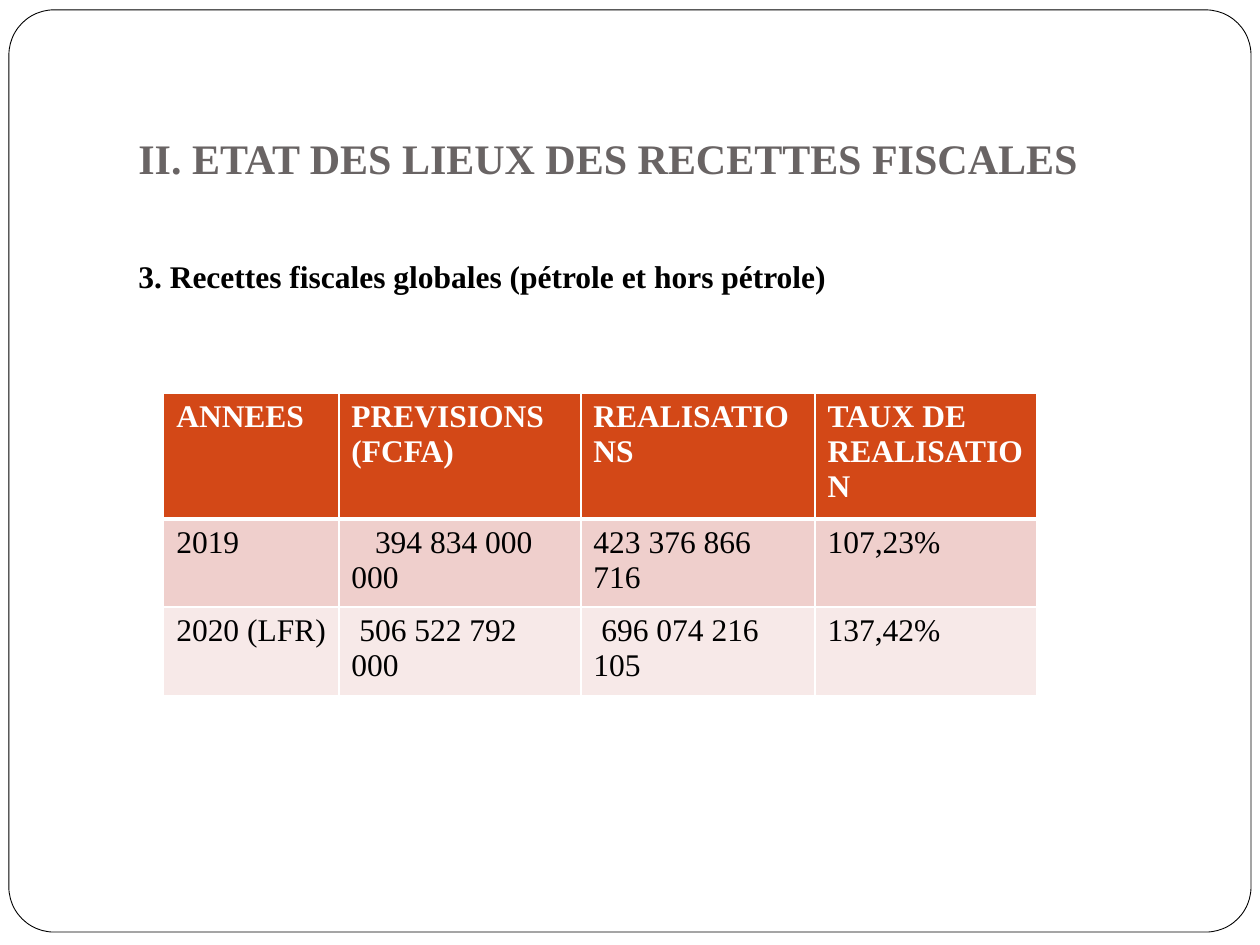
from lxml.etree import SubElement
from pptx import Presentation
from pptx.dml.color import RGBColor
from pptx.enum.shapes import MSO_SHAPE as SHAPE
from pptx.enum.text import MSO_ANCHOR as ANCHOR, PP_ALIGN as ALIGN
from pptx.oxml.ns import qn
from pptx.util import Cm, Pt

COLORS = {
    "white": "FFFFFF",
    "black": "000000",
    "title": "696464",
    "header": "D34817",
    "band_dark": "EFCFCC",
    "band_light": "F7E9E8",
}
FONT = "Times New Roman"
SPACE_WIDTH = 4.5  # points, one space at 18 pt

HEADERS = ["ANNEES", "PREVISIONS (FCFA)", "REALISATIONS", "TAUX DE REALISATION"]
# Each value with the first-line indent of its cell, in spaces
ROWS = [
    [("2019", 0), ("394 834 000 000", 3), ("423 376 866 716", 0), ("107,23%", 0)],
    [("2020 (LFR)", 0), ("506 522 792 000", 1), ("696 074 216 105", 1), ("137,42%", 0)],
]
COL_WIDTHS = [3.53, 4.88, 4.72, 4.47]
ROW_HEIGHT = 1.04


def rgb(name):
    return RGBColor.from_string(COLORS[name])


def write(p, text, color, size=18, bold=False):
    r = p.add_run()
    r.text = text
    for key, value in {"name": FONT, "size": Pt(size), "bold": bold}.items():
        setattr(r.font, key, value)
    r.font.color.rgb = rgb(color)


def add_frame(slide, box):
    sp = slide.shapes.add_shape(SHAPE.ROUNDED_RECTANGLE, *map(Cm, box))
    sp.adjustments[0] = 0.049
    sp.shadow.inherit = False
    sp.fill.solid()
    sp.fill.fore_color.rgb = rgb("white")
    sp.line.color.rgb = rgb("black")
    sp.line.width = Pt(0.5)


def add_text(slide, box, text, color, size, frame_format, align=ALIGN.LEFT):
    tf = slide.shapes.add_textbox(*map(Cm, box)).text_frame
    for key, value in {"word_wrap": True, **frame_format}.items():
        setattr(tf, key, value)
    p = tf.paragraphs[0]
    p.alignment = align
    write(p, text, color, size, bold=True)


def set_borders(cell, widths):
    tc_pr = cell._tc.get_or_add_tcPr()
    for side, width in widths.items():
        ln = SubElement(tc_pr, qn(f"a:ln{side}"), w=str(Pt(width)))
        fill = SubElement(ln, qn("a:solidFill"))
        SubElement(fill, qn("a:srgbClr"), val=COLORS["white"])


def fill_cell(cell, value, fill, color, bold, borders):
    text, spaces = value
    set_borders(cell, borders)
    cell.fill.solid()
    cell.fill.fore_color.rgb = rgb(fill)
    p = cell.text_frame.paragraphs[0]
    if spaces:
        p._p.get_or_add_pPr().set("indent", str(Pt(spaces * SPACE_WIDTH)))
    write(p, text, color, bold=bold)


def add_revenue_table(slide, left, top):
    rows = [[(text, 0) for text in HEADERS]] + ROWS
    table = slide.shapes.add_table(
        len(rows), len(COL_WIDTHS), Cm(left), Cm(top),
        Cm(sum(COL_WIDTHS)), Cm(ROW_HEIGHT * len(rows))).table
    for col, width in zip(table.columns, COL_WIDTHS):
        col.width = Cm(width)
    fills = ["header", "band_dark", "band_light"]
    for i, (values, fill) in enumerate(zip(rows, fills)):
        table.rows[i].height = Cm(ROW_HEIGHT)
        is_header = i == 0
        # Thick rule between the header and the first data row
        borders = {"L": 1, "R": 1, "T": 3 if i == 1 else 1, "B": 3 if is_header else 1}
        color = "white" if is_header else "black"
        for j, value in enumerate(values):
            fill_cell(table.cell(i, j), value, fill, color, is_header, borders)


def main():
    prs = Presentation()
    prs.slide_width, prs.slide_height = Cm(25.4), Cm(19.05)
    slide = prs.slides.add_slide(prs.slide_layouts[6])

    # Page frame
    add_frame(slide, (0.18, 0.2, 25.04, 18.59))
    # Title and subtitle
    add_text(slide, (2.54, 0.76, 21.59, 3.18),
             "II. ETAT DES LIEUX DES RECETTES FISCALES", "title", 24,
             {"vertical_anchor": ANCHOR.BOTTOM, "margin_bottom": Cm(0.25)})
    add_text(slide, (2.54, 5.05, 21.59, 11.66),
             "3. Recettes fiscales globales (pétrole et hors pétrole)", "black", 18,
             {"vertical_anchor": ANCHOR.TOP}, ALIGN.JUSTIFY)
    # Revenue table
    add_revenue_table(slide, 3.3, 7.92)

    prs.save("out.pptx")


if __name__ == "__main__":
    main()
